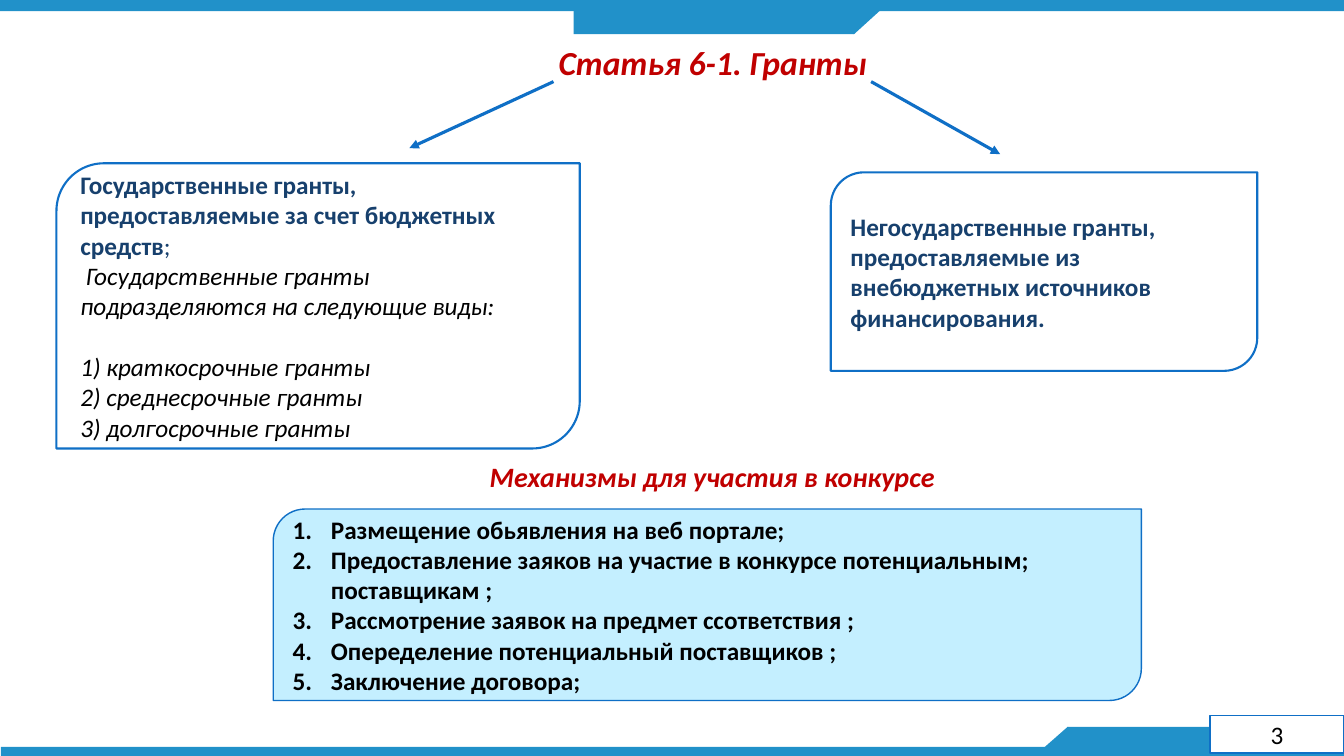
from lxml import etree
from pptx import Presentation
from pptx.dml.color import RGBColor
from pptx.enum.shapes import MSO_CONNECTOR, MSO_SHAPE
from pptx.enum.text import MSO_ANCHOR, MSO_AUTO_SIZE, PP_ALIGN
from pptx.oxml.ns import qn
from pptx.util import Inches, Pt

RECTANGLE = MSO_SHAPE.RECTANGLE
TRIANGLE = MSO_SHAPE.FLOWCHART_MERGE
DIAGONAL = MSO_SHAPE.ROUND_2_DIAG_RECTANGLE
STRAIGHT = MSO_CONNECTOR.STRAIGHT
MIDDLE = MSO_ANCHOR.MIDDLE
NO_AUTOFIT = MSO_AUTO_SIZE.NONE
LEFT, CENTER = PP_ALIGN.LEFT, PP_ALIGN.CENTER

COLORS = {
    "band": "2191C9",
    "outline": "0F6FC6",
    "white": "FFFFFF",
    "ice": "C4EFFF",
    "red": "C00000",
    "navy": "17406D",
    "black": "000000",
}

HEADING = {"color": "red", "bold": True, "italic": True}
STRONG = {"color": "navy", "bold": True}
PLAIN = {"color": "navy"}
DETAIL = {"color": "black", "italic": True}
STEP = {"color": "black", "bold": True}


class GrantSlide:
    font_name = "Calibri"

    def __init__(self, deck):
        self.page = deck.slides.add_slide(deck.slide_layouts[1])
        self.shapes = self.page.shapes

    def color(self, name):
        return RGBColor.from_string(COLORS[name])

    def place(self, box, frame):
        for name, value in zip(("left", "top", "width", "height"), frame):
            setattr(box, name, Inches(value))

    def paint(self, box, fill, line_width=None):
        box.fill.solid()
        box.fill.fore_color.rgb = self.color(fill)
        if line_width is None:
            box.line.fill.background()
        else:
            box.line.color.rgb = self.color("outline")
            box.line.width = Pt(line_width)

    def shape(self, kind, frame, fill, line_width=None, rotation=0):
        box = self.shapes.add_shape(kind, *map(Inches, frame))
        box.shadow.inherit = False
        box.rotation = rotation
        self.paint(box, fill, line_width)
        return box

    def fill_text(self, box, paragraphs, size=18, numbered=False, **layout):
        text_frame = box.text_frame
        frame_format = {"word_wrap": True, "auto_size": NO_AUTOFIT, "vertical_anchor": MIDDLE}
        for name, value in frame_format.items():
            setattr(text_frame, name, value)
        for index, spans in enumerate(paragraphs):
            para = text_frame.paragraphs[0] if index == 0 else text_frame.add_paragraph()
            if numbered:
                self.number(para)
            para_format = {"alignment": LEFT, "space_before": Pt(0), **layout}
            for name, value in para_format.items():
                setattr(para, name, value)
            for text, style in spans:
                span = para.add_run()
                span.text = text
                font_format = {"name": self.font_name, "size": Pt(size), "bold": False, "italic": False, **style}
                span.font.color.rgb = self.color(font_format.pop("color"))
                for name, value in font_format.items():
                    setattr(span.font, name, value)
        return text_frame

    def number(self, para):
        properties = para._p.get_or_add_pPr()
        indent = Inches(0.38)
        properties.set("marL", str(indent))
        properties.set("indent", str(-indent))
        bullet_font = etree.SubElement(properties, qn("a:buFont"))
        bullet_font.set("typeface", "+mj-lt")
        etree.SubElement(properties, qn("a:buAutoNum")).set("type", "arabicPeriod")

    def title(self, frame, text):
        box = self.shapes.title
        self.place(box, frame)
        self.fill_text(box, [[(text, HEADING)]], size=24, alignment=CENTER, line_spacing=0.9)

    def subtitle(self, frame, text):
        box = self.shapes.add_textbox(*map(Inches, frame))
        self.fill_text(box, [[(text, HEADING)]], size=20, alignment=CENTER, line_spacing=0.9)

    def steps(self, frame, texts):
        box = self.page.placeholders[1]
        self.place(box, frame)
        geometry = etree.SubElement(box.element.spPr, qn("a:prstGeom"))
        geometry.set("prst", "round2DiagRect")
        etree.SubElement(geometry, qn("a:avLst"))
        self.paint(box, "ice", 1)
        self.fill_text(box, [[(text, STEP)] for text in texts], numbered=True)

    def card(self, frame, paragraphs):
        box = self.shape(DIAGONAL, frame, "white", 1.5)
        return self.fill_text(box, paragraphs)

    def arrow(self, start, end):
        connector = self.shapes.add_connector(STRAIGHT, *map(Inches, start + end))
        connector.line.color.rgb = self.color("outline")
        connector.line.width = Pt(2.25)
        properties = connector.element.spPr
        etree.SubElement(properties.find(qn("a:ln")), qn("a:tailEnd")).set("type", "triangle")
        etree.SubElement(properties, qn("a:effectLst"))

    def bands(self):
        for frame in (
            (0, 0, 13.33, 0.11),
            (0.01, 7.41, 13.32, 0.09),
            (5.69, 0.04, 2.78, 0.3),
            (10.59, 7.21, 2.74, 0.29),
        ):
            self.shape(RECTANGLE, frame, "band")
        self.shape(TRIANGLE, (8.14, 0.04, 0.66, 0.3), "band")
        self.shape(TRIANGLE, (10.26, 7.21, 0.66, 0.29), "band", rotation=180)

    def page_number(self, text):
        box = self.shape(RECTANGLE, (12, 7.1, 1.33, 0.37), "white", 1)
        self.fill_text(box, [[(text, {"color": "black"})]], alignment=CENTER)


def main():
    deck = Presentation()
    deck.slide_width, deck.slide_height = Inches(13.33), Inches(7.5)
    slide = GrantSlide(deck)

    slide.bands()
    slide.page_number("3")
    slide.title((4.6, 0.21, 4.94, 0.86), "Статья 6-1. Гранты")

    state_grants = slide.card((0.56, 1.62, 5.19, 2.83), [
        [("Государственные гранты, предоставляемые за счет бюджетных средств", STRONG), (";", PLAIN)],
        [(" Государственные гранты подразделяются на следующие виды:", DETAIL)],
        [("1) краткосрочные гранты", DETAIL)],
        [("2) среднесрочные гранты", DETAIL)],
        [("3) долгосрочные гранты", DETAIL)],
    ])
    state_grants.paragraphs[2].space_before = Pt(22)
    slide.card((8.24, 1.71, 4.23, 1.97), [
        [("Негосударственные гранты, предоставляемые из внебюджетных источников финансирования.", STRONG)],
    ])
    slide.arrow((5.49, 0.81), (4.06, 1.47))
    slide.arrow((8.64, 0.81), (9.92, 1.53))

    slide.subtitle((2.61, 4.51, 8.91, 0.48), "Механизмы для участия в конкурсе")
    slide.steps((2.71, 5.05, 8.61, 1.9), [
        "Размещение обьявления на веб портале;",
        "Предоставление заяков на участие в конкурсе потенциальным; поставщикам ;",
        "Рассмотрение заявок на предмет ссответствия ;",
        "Опеределение потенциальный поставщиков ;",
        "Заключение договора;",
    ])
    deck.save("out.pptx")


if __name__ == "__main__":
    main()
